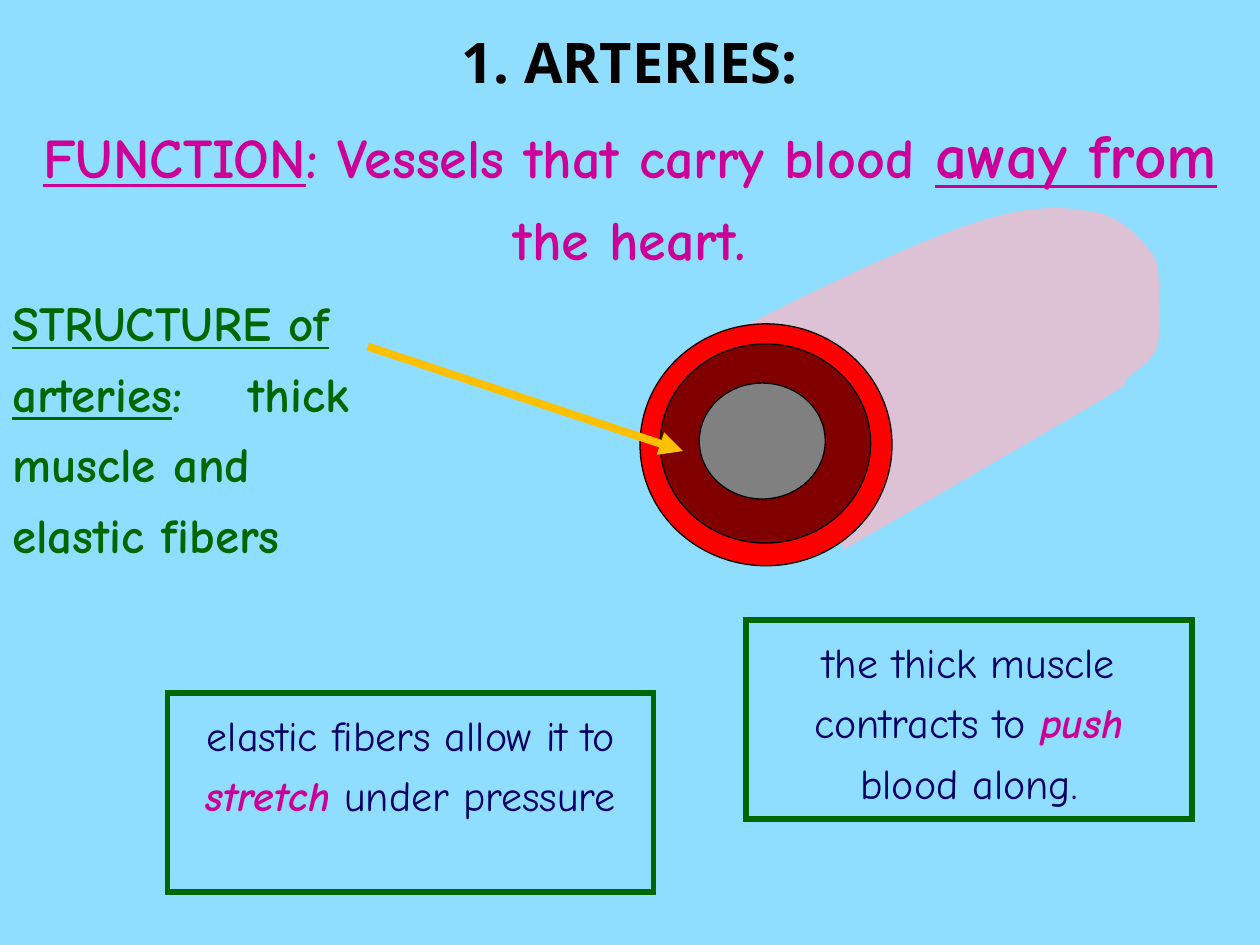
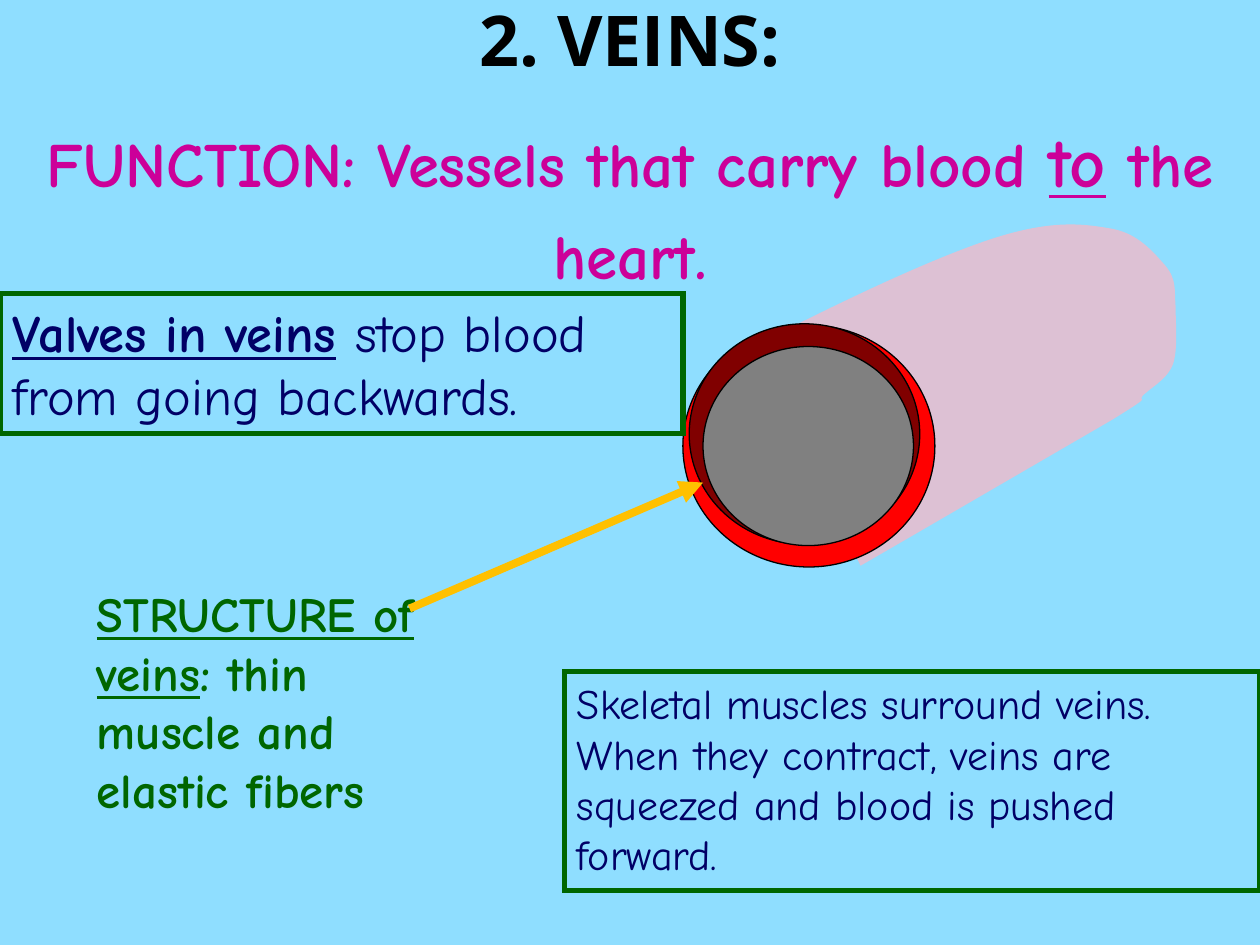
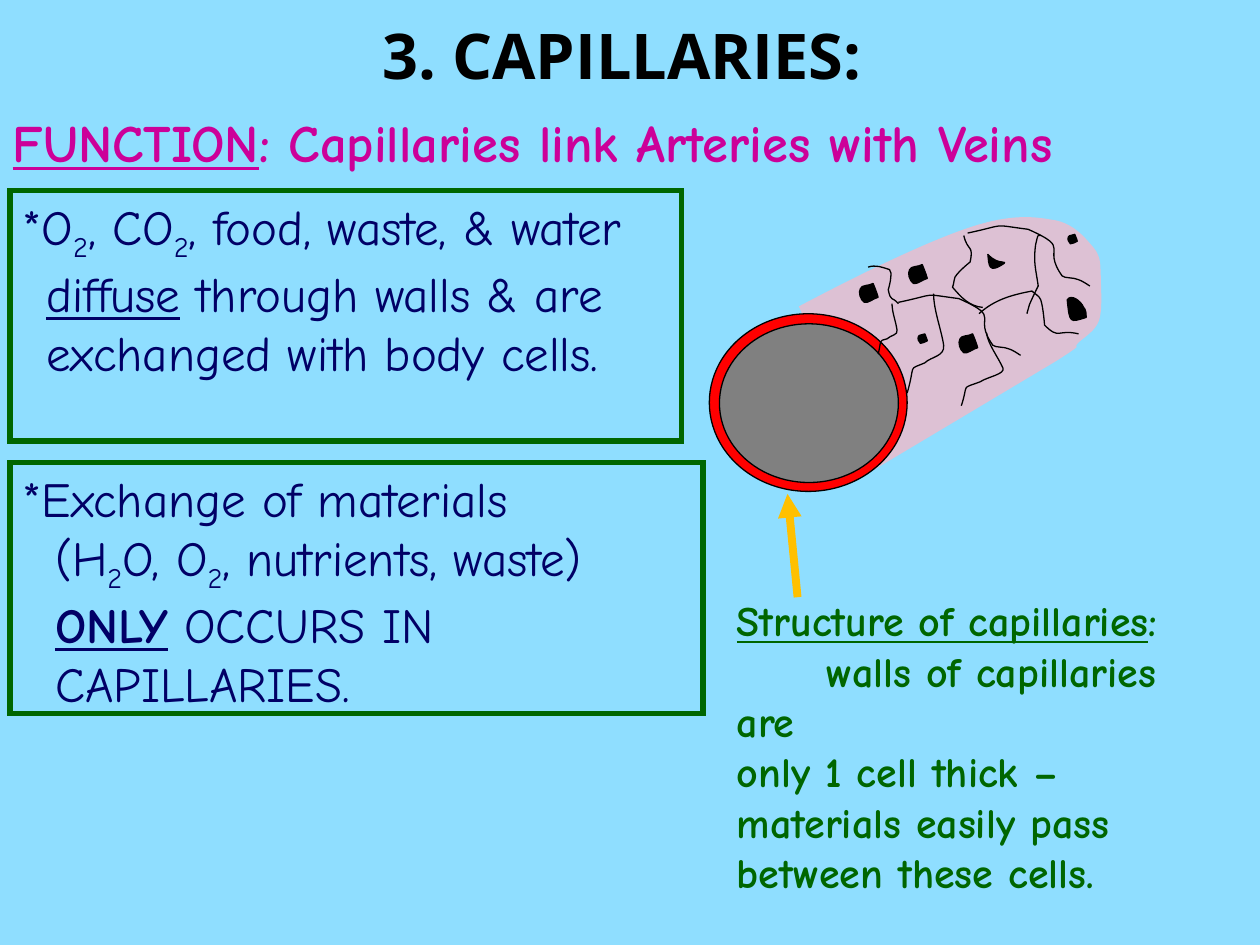
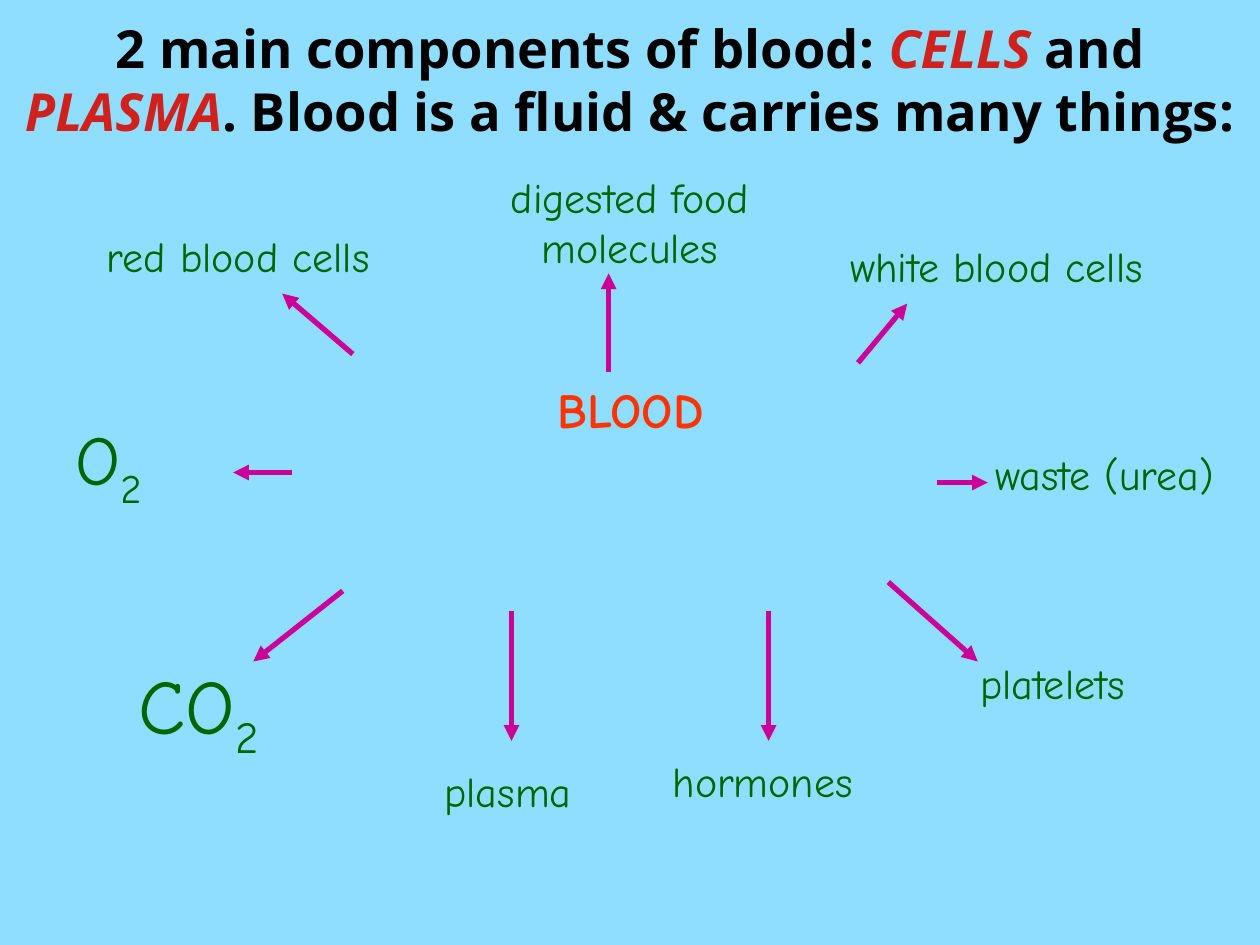
from dataclasses import dataclass

from lxml.etree import SubElement
from pptx import Presentation
from pptx.dml.color import RGBColor
from pptx.enum.shapes import MSO_CONNECTOR as CONN, MSO_SHAPE as SHAPE
from pptx.enum.text import MSO_ANCHOR as ANCHOR, MSO_AUTO_SIZE as FIT, PP_ALIGN as ALIGN
from pptx.oxml.ns import qn
from pptx.util import Inches, Pt


@dataclass(frozen=True)
class Theme:
    sky: str = "8FDEFF"
    black: str = "000000"
    green: str = "006600"
    navy: str = "010066"
    magenta: str = "CC0099"
    crimson: str = "D0211C"
    orange: str = "FF3300"
    gold: str = "FFC000"
    tube: str = "DDC1D4"
    outer: str = "FF0000"
    muscle: str = "800000"
    lumen: str = "808080"
    head: str = "Open Sans"
    text: str = "Comic Neue"
    small: int = 24
    medium: int = 28
    large: int = 30
    wide: int = 32
    huge: int = 36
    giant: int = 40
    formula: int = 44


T = Theme()

# Content. A run is (text, flags, overrides); flags: b bold, i italic, u underline, _ subscript.
# A paragraph is (runs, left margin, first-line indent). BREAK starts a new line.
BREAK = ("\n",)
STRESS = {"color": T.magenta}
RED = {"color": T.crimson}

VESSELS = [
    dict(
        title=("1. ARTERIES:", T.wide, 0.17, 0.63),
        function=dict(
            at=(0, 0.75, 10, 1.56), size=T.wide, align=ALIGN.CENTER, spacing=1.2,
            paras=[([("FUNCTION", "bu"), (": Vessels that carry blood ", "b"),
                     ("away from", "bu", {"size": T.huge}), (" the heart.", "b")],)]),
        tube=(5.87, 1.62, 1, 1),
        rings=[(5.08, 2.57, 2, 1.92, T.outer), (5.24, 2.73, 1.67, 1.58, T.muscle),
               (5.55, 3.04, 1, 0.92, T.lumen)],
        structure=dict(
            at=(0, 2.18, 3.23, 2.93), size=T.medium, spacing=1.2,
            paras=[([("STRUCTURE of arteries", "bu"), (":", "b"), (" ", "b", {"gap": 28}),
                     ("thick muscle and elastic fibers", "b")],)]),
        arrow=(2.92, 2.75, 5.42, 3.58),
        boxes=[
            dict(at=(1.33, 5.5, 3.86, 1.58), size=T.small, align=ALIGN.CENTER, spacing=1.2,
                 paras=[([("elastic fibers allow it to ", ""), ("stretch", "bi", STRESS),
                          (" under pressure", "")],)]),
            dict(at=(5.92, 4.92, 3.54, 1.58), size=T.small, align=ALIGN.CENTER, spacing=1.2,
                 paras=[([("the thick muscle contracts to ", ""), ("push", "bi", STRESS),
                          (" blood along.", "")],)]),
        ],
    ),
    dict(
        title=("2. VEINS:", T.giant, -0.08, 0.77),
        function=dict(
            at=(0, 0.75, 10, 1.64), size=T.huge, align=ALIGN.CENTER, spacing=1.2,
            paras=[([("FUNCTION: Vessels that carry blood ", "b"),
                     ("to", "bu", {"size": T.giant}), (" the heart.", "b")],)]),
        tube=(6, 1.75, 1, 1),
        rings=[(5.42, 2.58, 2, 1.92, T.outer), (5.47, 2.57, 1.83, 1.75, T.muscle),
               (5.58, 2.75, 1.67, 1.58, T.lumen)],
        structure=dict(
            at=(0.67, 4.58, 2.98, 1.99), size=T.medium,
            paras=[([("STRUCTURE of veins", "bu"),
                     (": thin muscle and elastic fibers", "b")],)]),
        arrow=(3.25, 4.83, 5.58, 3.83),
        boxes=[
            dict(at=(0, 2.33, 5.42, 1.11), size=T.large,
                 paras=[([("Valves in veins", "bu"), (" ", "b"),
                          ("stop blood from going backwards.", "")],)]),
            dict(at=(4.48, 5.33, 5.52, 1.74), size=T.small,
                 paras=[([("Skeletal muscles surround veins. When they contract, veins are "
                           "squeezed and blood is pushed forward.", "")],)]),
        ],
    ),
    dict(
        title=("3. CAPILLARIES: ", T.huge, 0.08, 0.7),
        function=dict(
            at=(0, 0.72, 10, 0.71), size=T.large, spacing=1.2,
            paras=[([("FUNCTION", "bu"), (": Capillaries link Arteries with Veins", "b")],)]),
        tube=(6.34, 1.7, 0.72, 0.74),
        rings=[(5.63, 2.49, 1.57, 1.41, T.outer), (5.71, 2.57, 1.42, 1.26, T.lumen)],
        structure=dict(
            at=(5.75, 4.67, 3.94, 2.52), size=T.small,
            paras=[([("Structure of capillaries", "bu"), (":", "b")],),
                   ([("walls of capillaries are", "b")], 0, 0.71),
                   ([("only 1 cell thick – materials easily pass between these cells.", "b")],)]),
        arrow=(6.33, 4.74, 6.25, 3.92),
        boxes=[
            dict(at=(0.08, 1.51, 5.33, 1.99), size=T.medium,
                 paras=[([("*O", ""), ("2", "_"), (", CO", ""), ("2", "_"),
                          (", food, waste, & water ", ""), ("diffuse", "u"),
                          (" through walls & are exchanged with body cells.", "")],
                         0.19, -0.19)]),
            dict(at=(0.08, 3.67, 5.5, 1.99), size=T.medium,
                 paras=[([("*Exchange of materials", ""), BREAK, ("(H", ""), ("2", "_"),
                          ("O, O", ""), ("2", "_"), (", nutrients, waste) ", ""),
                          ("ONLY", "bu"), (" OCCURS IN CAPILLARIES.", "")], 0.26, -0.26)]),
        ],
    ),
]

BLOOD_TITLE = [("2 main components of blood: ", "b"), ("CELLS", "bi", RED), (" and ", "b"),
               ("PLASMA", "bi", RED), (". Blood is a fluid & carries many things:", "b")]
# Label runs, place, size, alignment, then the arrow that points to it
CARRIED = [
    ([("red blood cells", "")], (0.75, 1.78, 2.52, 0.5), T.small, ALIGN.LEFT,
     (2.8, 2.81, 2.24, 2.33)),
    ([("digested food molecules", "")], (3.82, 1.31, 2.36, 0.9), T.small, ALIGN.CENTER,
     (4.83, 2.95, 4.83, 2.17)),
    ([("white blood cells", "")], (6.65, 1.86, 2.84, 0.5), T.small, ALIGN.LEFT,
     (6.81, 2.88, 7.2, 2.41)),
    ([("waste (urea)", "")], (7.8, 3.51, 2.2, 0.5), T.small, ALIGN.LEFT,
     (7.44, 3.83, 7.84, 3.83)),
    ([("platelets", "")], (7.68, 5.17, 1.65, 0.5), T.small, ALIGN.LEFT,
     (7.05, 4.62, 7.76, 5.25)),
    ([("hormones", "")], (5.24, 5.95, 1.73, 0.5), T.small, ALIGN.LEFT,
     (6.1, 4.85, 6.1, 5.88)),
    ([("plasma", "")], (3.43, 6.03, 1.34, 0.5), T.small, ALIGN.LEFT,
     (4.06, 4.85, 4.06, 5.88)),
    ([("CO", ""), ("2", "_")], (1, 5.17, 2.6, 0.83), T.formula, ALIGN.LEFT,
     (2.72, 4.69, 2.01, 5.25)),
    ([("O", ""), ("2", "_")], (0.5, 3.25, 1.34, 0.77), T.giant, ALIGN.LEFT,
     (2.32, 3.75, 1.85, 3.75)),
]

# Curves: a start point, then three Bezier points per segment, in inches
TUBE = [(0, 0.99), (0.68, 0.64), (1.36, 0.32), (1.83, 0.16), (2.3, 0), (2.56, 0.02),
        (2.79, 0.06), (3.03, 0.09), (3.16, 0.26), (3.25, 0.36), (3.34, 0.47), (3.32, 0.55),
        (3.33, 0.68), (3.33, 0.81), (3.35, 1.02), (3.31, 1.14), (3.27, 1.25), (3.16, 1.31),
        (3.08, 1.38), (3, 1.46), (3.2, 1.35), (2.83, 1.58), (2.45, 1.8), (1.16, 2.55),
        (0.83, 2.74)]
NUCLEUS = [(0.12, 0), (0.09, 0.02), (0.03, 0.01), (0.02, 0.04), (0, 0.07), (0.02, 0.13),
           (0.05, 0.15), (0.08, 0.16), (0.12, 0.12), (0.16, 0.11), (0.15, 0.07), (0.12, 0),
           (0.12, 0)]
NUCLEI = [(6.81, 2.25, 1), (7.2, 2.1, 1), (7.6, 2.65, 1), (8.47, 1.86, 0.5), (7.28, 2.65, 0.5)]
ODD_NUCLEI = [
    [(8.47, 2.38), (8.49, 2.57), (8.49, 2.56), (8.62, 2.52), (8.62, 2.49), (8.62, 2.46),
     (8.6, 2.44), (8.58, 2.39), (8.5, 2.33), (8.47, 2.38)],
    [(7.84, 2.02), (7.85, 2.1), (7.84, 2.18), (7.97, 2.09), (7.99, 2.08), (7.93, 2.08),
     (7.91, 2.07), (7.87, 2.05), (7.86, 2.04), (7.84, 2.02)],
]
LONG_SEAM = [(0, 0.07), (0.33, 0), (0.17, 0), (0.48, 0.04), (0.84, 0.2), (0.58, 0.17),
             (0.75, 0.41), (0.77, 0.43), (0.84, 0.42), (0.88, 0.44), (0.91, 0.45),
             (0.94, 0.47), (0.97, 0.49)]
LONG_SEAMS = [(7.68, 1.78), (7.13, 2.33)]
SEAMS = [
    [(8.15, 2.49), (8.16, 2.47), (8.16, 2.44), (8.17, 2.42), (8.19, 2.37), (8.24, 2.27),
     (8.24, 2.27), (8.22, 2.13), (8.2, 2.08), (8.22, 1.94), (8.24, 1.86), (8.23, 1.87),
     (8.26, 1.87)],
    [(7.8, 2.44), (7.69, 2.43), (7.63, 2.36), (7.56, 2.28), (7.57, 2.26), (7.57, 2.23),
     (7.58, 2.2), (7.61, 2.15), (7.7, 2.08), (7.7, 2.08), (7.73, 1.94), (7.68, 2),
     (7.65, 1.87)],
    [(7.2, 3.12), (7.27, 2.88), (7.2, 2.94), (7.34, 2.88), (7.39, 2.83), (7.5, 2.83),
     (7.49, 2.74), (7.47, 2.61), (7.41, 2.46), (7.41, 2.33)],
    [(6.89, 2.12), (6.95, 2.1), (7, 2.12), (7.06, 2.14), (7.07, 2.16), (7.08, 2.18),
     (7.07, 2.2), (7.07, 2.23), (7.05, 2.3), (7.05, 2.3), (7.07, 2.4), (7.08, 2.35),
     (7.13, 2.41)],
    [(6.97, 2.81), (7, 2.69), (6.97, 2.71), (7.04, 2.69), (7.07, 2.66), (7.13, 2.66),
     (7.12, 2.62), (7.11, 2.55), (7.08, 2.48), (7.08, 2.41)],
    [(7.63, 3.22), (7.69, 3.04), (7.62, 3.09), (7.78, 3.03), (7.84, 2.99), (7.98, 2.97),
     (7.96, 2.92), (7.92, 2.83), (7.84, 2.73), (7.83, 2.64)],
    [(7.77, 2.49), (7.89, 2.38), (8.03, 2.34), (8.19, 2.31), (8.21, 2.33), (8.25, 2.35),
     (8.26, 2.38), (8.28, 2.44), (8.29, 2.58), (8.29, 2.58), (8.41, 2.7), (8.39, 2.61),
     (8.56, 2.65)],
]


def rgb(color):
    return RGBColor.from_string(color)


def paint(sp, fill=None, line=None, width=0.75):
    """Set fill and outline; None means empty."""
    sp.shadow.inherit = False
    if fill:
        sp.fill.solid()
        sp.fill.fore_color.rgb = rgb(fill)
    else:
        sp.fill.background()
    if line:
        sp.line.color.rgb = rgb(line)
        sp.line.width = Pt(width)
    else:
        sp.line.fill.background()


# Text
def add_run(p, text, flags="", over=None, *, font, size, color):
    style = {"size": size, "color": color, **(over or {})}
    r = p.add_run()
    r.text = text
    f = r.font
    f.name, f.size = font, Pt(style["size"])
    f.color.rgb = rgb(style["color"])
    f.bold, f.italic, f.underline = "b" in flags, "i" in flags, "u" in flags
    rPr = r._r.get_or_add_rPr()
    if "_" in flags:
        rPr.set("baseline", "-25000")
    if "gap" in style:
        rPr.set("spc", str(100 * style["gap"]))


def set_indent(p, left=0, first=0):
    pPr = p._p.get_or_add_pPr()
    pPr.set("marL", str(Inches(left)))
    pPr.set("indent", str(Inches(first)))
    SubElement(pPr, qn("a:buNone"))


def write(sp, paras, size, color, font=T.text, align=ALIGN.LEFT, spacing=1.0, wrap=True):
    tf = sp.text_frame
    tf.word_wrap, tf.auto_size, tf.vertical_anchor = wrap, FIT.NONE, ANCHOR.TOP
    for n, (runs, *indent) in enumerate(paras):
        p = tf.add_paragraph() if n else tf.paragraphs[0]
        p.alignment, p.line_spacing, p.space_before = align, spacing, Pt(0)
        set_indent(p, *indent)
        for run in runs:
            if run is BREAK:
                p.add_line_break()
            else:
                add_run(p, *run, font=font, size=size, color=color)


def place(sp, at):
    sp.left, sp.top, sp.width, sp.height = map(Inches, at)
    return sp


def add_label(s, at, **text):
    write(s.shapes.add_textbox(*map(Inches, at)), **text)


def add_frame(s, at, **text):
    sp = s.shapes.add_shape(SHAPE.RECTANGLE, *map(Inches, at))
    paint(sp, line=T.green, width=3)
    SubElement(sp._element.spPr.find(qn("a:ln")), qn("a:miter"), lim="800000")
    write(sp, color=T.navy, **text)


def add_slide(prs, layout, runs, size, top, height):
    s = prs.slides.add_slide(prs.slide_layouts[layout])
    write(place(s.shapes.title, (0, top, 10, height)), [(runs,)], size, T.black,
          font=T.head, align=ALIGN.CENTER)
    return s


# Drawing
def add_arrow(s, ends, color, width):
    c = s.shapes.add_connector(CONN.STRAIGHT, *map(Inches, ends))
    c.line.color.rgb = rgb(color)
    c.line.width = Pt(width)
    spPr = c._element.spPr
    SubElement(spPr.find(qn("a:ln")), qn("a:tailEnd"), type="triangle")
    SubElement(spPr, qn("a:effectLst"))


def add_curve(s, points, x=0, y=0, sx=1, sy=1, close=False, **look):
    start, *rest = [(Inches(x + sx * px), Inches(y + sy * py)) for px, py in points]
    builder = s.shapes.build_freeform(*start)
    builder.add_line_segments(rest, close=close)
    sp = builder.convert_to_shape()
    # Join each three straight steps into one Bezier segment
    steps = list(sp._element.iter(qn("a:lnTo")))
    for a, b, c in zip(steps[::3], steps[1::3], steps[2::3]):
        for step in (b, c):
            a.append(step[0])
            step.getparent().remove(step)
        a.tag = qn("a:cubicBezTo")
    paint(sp, **look)


def add_cells(s):
    """Cell borders and nuclei on the capillary wall."""
    for x, y in LONG_SEAMS:
        add_curve(s, LONG_SEAM, x, y, line=T.black)
    for seam in SEAMS:
        add_curve(s, seam, line=T.black)
    nucleus = dict(close=True, fill=T.black, line=T.black)
    for x, y, scale in NUCLEI:
        add_curve(s, NUCLEUS, x, y, scale, scale, **nucleus)
    for outline in ODD_NUCLEI:
        add_curve(s, outline, **nucleus)


# Slides
def add_vessel(prs, vessel):
    title, *spot = vessel["title"]
    s = add_slide(prs, 1, [(title, "b")], *spot)
    function = dict(vessel["function"])
    write(place(s.placeholders[1], function.pop("at")), color=T.magenta, **function)
    add_curve(s, TUBE, *vessel["tube"], fill=T.tube)
    for *at, fill in vessel["rings"]:
        paint(s.shapes.add_shape(SHAPE.OVAL, *map(Inches, at)), fill, T.black)
    add_label(s, color=T.green, **vessel["structure"])
    add_arrow(s, vessel["arrow"], T.gold, 4.5)
    for box in vessel["boxes"]:
        add_frame(s, **box)
    return s


def add_blood(prs):
    s = add_slide(prs, 5, BLOOD_TITLE, T.large, 0.08, 1.11)
    add_label(s, (2.8, 2.96, 4.41, 1.67), paras=[([("BLOOD", "b")],)], size=T.medium,
              color=T.orange, align=ALIGN.CENTER, wrap=False)
    for runs, at, size, align, ends in CARRIED:
        add_label(s, at, paras=[(runs,)], size=size, color=T.green, align=align)
        add_arrow(s, ends, T.magenta, 3)


def main():
    prs = Presentation()
    prs.slide_width, prs.slide_height = Inches(10), Inches(7.5)
    back = prs.slide_master.background.fill
    back.solid()
    back.fore_color.rgb = rgb(T.sky)
    slides = [add_vessel(prs, vessel) for vessel in VESSELS]
    add_cells(slides[-1])
    add_blood(prs)
    prs.save("out.pptx")


if __name__ == "__main__":
    main()
